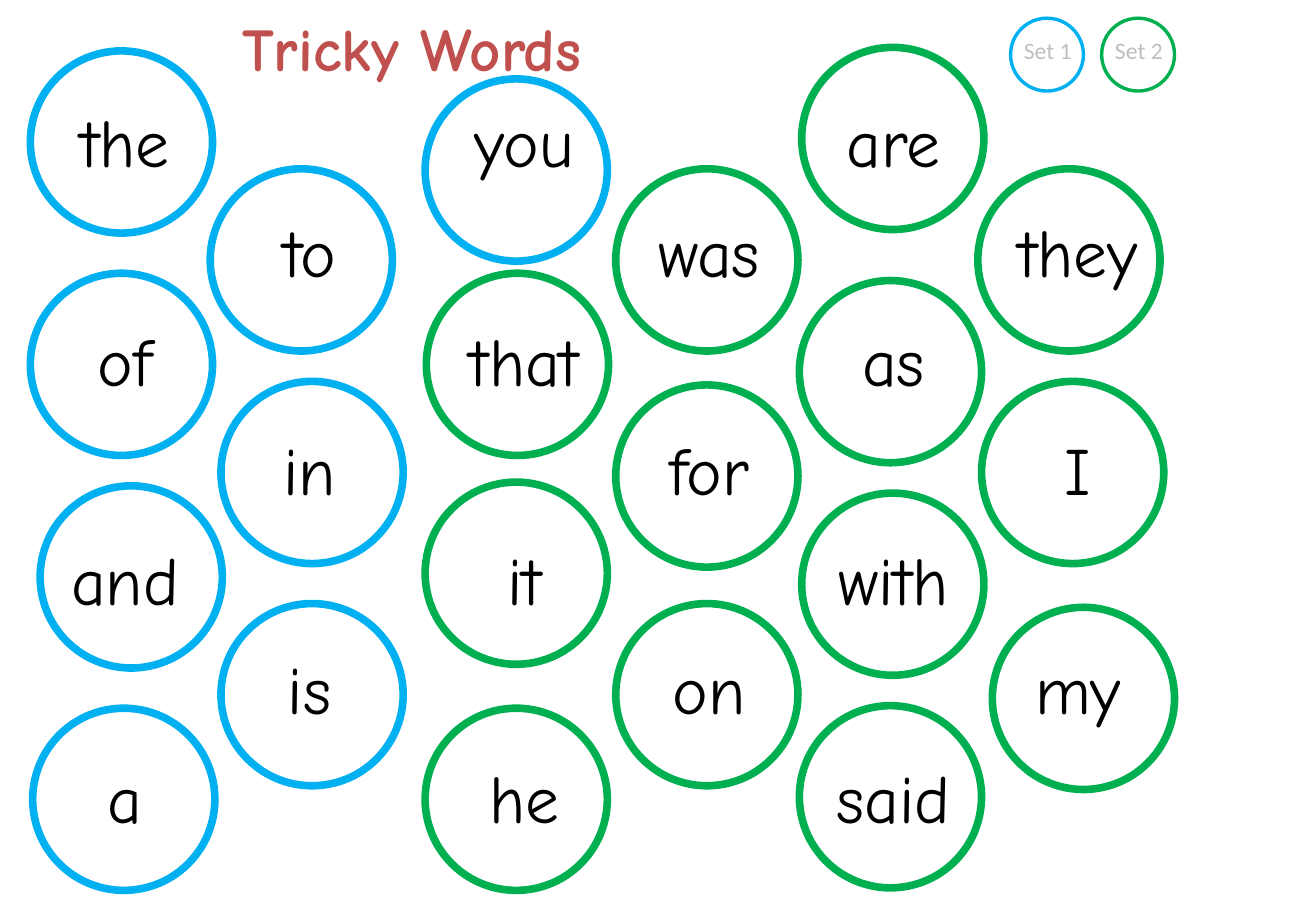
from lxml import etree
from pptx import Presentation
from pptx.dml.color import RGBColor
from pptx.enum.shapes import MSO_SHAPE
from pptx.enum.text import MSO_ANCHOR, PP_ALIGN
from pptx.oxml.ns import qn
from pptx.util import Pt

OVAL = MSO_SHAPE.OVAL
MIDDLE = MSO_ANCHOR.MIDDLE
LEFT, CENTER = PP_ALIGN.LEFT, PP_ALIGN.CENTER

COLORS = {"set1": "00B0F0", "set2": "00B050", "title": "C0504D", "edge": "FF0000",
          "word": "000000", "label": "BFBFBF", "back": "FFFFFF"}
COMIC, PLAIN = "Comic Neue", "Calibri"

# Table column, then each word with the left and top of its circle;
# words fill every second row
WORDS = [
    (0, [("the", 18, 30.2), ("of", 18, 162), ("and", 23.8, 288), ("a", 19.4, 419.8)]),
    (1, [("to", 124.6, 100.1), ("in", 131, 226.1), ("is", 131, 357.8)]),
    (3, [("you", 252, 46.8), ("that", 252.7, 162), ("it", 252, 285.8), ("he", 252, 419.8)]),
    (4, [("was", 365, 100.1), ("for", 365, 228.2), ("on", 365, 357.8)]),
    (5, [("are", 475.2, 28.1), ("as", 473.8, 166.3), ("with", 475.2, 292.3),
         ("said", 473.8, 418.3)]),
    (6, [("they", 579.6, 100.1), ("I", 581.8, 226.1), ("my", 588.2, 360)]),
]
SET1 = {"the", "of", "and", "a", "to", "in", "is", "you"}
WIDTHS = [109.4, 109.4, 18, 109.4, 109.4, 109.4, 109.4]
ROWS, HEIGHT = 7, 64.8


def color(name):
    return RGBColor.from_string(COLORS[name])


def add_run(frame, text, font, size, tint, align, bold=False):
    para = frame.paragraphs[0]
    para.alignment = align
    run = para.add_run()
    run.text = text
    run.font.name, run.font.size, run.font.bold = font, Pt(size), bold
    run.font.color.rgb = color(tint)
    return run


def add_ring(slide, left, top, size, tint, width):
    ring = slide.shapes.add_shape(OVAL, Pt(left), Pt(top), Pt(size), Pt(size))
    ring.shadow.inherit = False
    ring.fill.background()
    ring.line.color.rgb = color(tint)
    ring.line.width = Pt(width)


def add_box(slide, left, top, width, height, wrap):
    box = slide.shapes.add_textbox(Pt(left), Pt(top), Pt(width), Pt(height))
    box.text_frame.word_wrap = wrap
    return box


def add_edge(run, tint, width):
    props = run.font._element
    line = etree.Element(qn("a:ln"), w=str(Pt(width)))
    fill = etree.SubElement(line, qn("a:solidFill"))
    etree.SubElement(fill, qn("a:srgbClr"), val=COLORS[tint])
    props.insert(0, line)


def add_grid(slide):
    table = slide.shapes.add_table(ROWS, len(WIDTHS), Pt(19.4), Pt(54),
                                   Pt(sum(WIDTHS)), Pt(ROWS * HEIGHT)).table
    table.first_row = table.horz_banding = False
    for col, width in zip(table.columns, WIDTHS):
        col.width = Pt(width)
    for row in table.rows:
        row.height = Pt(HEIGHT)
    for cell in table.iter_cells():
        cell.fill.background()
        cell.vertical_anchor = MIDDLE
    return table


def add_words(slide):
    table = add_grid(slide)
    for col, words in WORDS:
        start = 0 if len(words) == 4 else 1
        for i, (word, left, top) in enumerate(words):
            cell = table.cell(start + 2 * i, col)
            add_run(cell.text_frame, word, COMIC, 40, "word", CENTER)
            add_ring(slide, left, top, 108, "set1" if word in SET1 else "set2", 4.5)


def add_title(slide):
    box = add_box(slide, 116.6, 2.9, 254.9, 51, False)
    run = add_run(box.text_frame, "Tricky Words", COMIC, 36, "title", CENTER, True)
    add_edge(run, "edge", 0.75)


def add_key(slide):
    spots = [("Set 1", "set1", 599), ("Set 2", "set2", 653)]
    for text, _, left in spots:
        box = add_box(slide, left + 0.8, 18, 59.8, 24.5, True)
        box.fill.solid()
        box.fill.fore_color.rgb = color("back")
        add_run(box.text_frame, text, PLAIN, 14, "label", LEFT)
    for _, tint, left in spots:
        add_ring(slide, left, 10.8, 43.2, tint, 2)


def main():
    deck = Presentation()
    deck.slide_width, deck.slide_height = Pt(780), Pt(540)
    slide = deck.slides.add_slide(deck.slide_layouts[6])
    # Word grid with its circles
    add_words(slide)
    # Heading and colour key
    add_title(slide)
    add_key(slide)
    deck.save("out.pptx")


if __name__ == "__main__":
    main()
